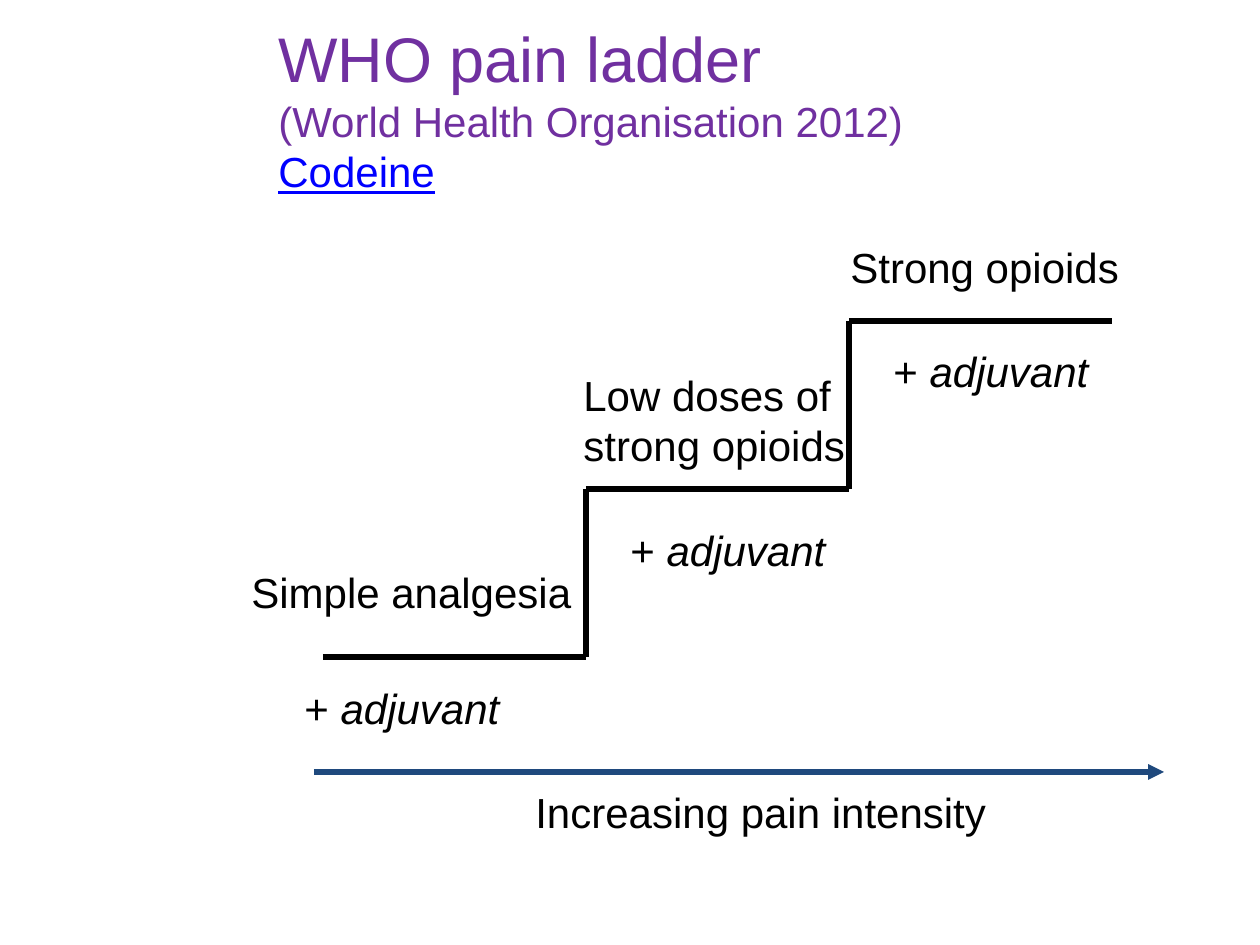
"""Build the pain ladder slide."""
import dataclasses
import typing

import lxml.etree
import pptx
import pptx.dml.color
import pptx.enum.shapes
import pptx.enum.text
import pptx.oxml.ns
import pptx.util

SCALE = 914400 / 126


@dataclasses.dataclass(frozen=True)
class Theme:
    font: str = "Arial"
    head: int = 36
    body: int = 24
    line: int = 3
    ink: str = "000000"
    title: str = "7030A0"
    link: str = "0000FF"
    arrow: str = "1F497D"


THEME = Theme()


class Run(typing.NamedTuple):
    text: str
    size: int = THEME.body
    color: str = THEME.ink
    slant: bool = False
    under: bool = False


class Box(typing.NamedTuple):
    left: int
    top: int
    width: int
    height: int


class Step(typing.NamedTuple):
    name: str
    label: Box
    wrap: bool
    extra: tuple[int, int]


STEPS = (
    Step("Simple analgesia", Box(239, 560, 345, 63), False, (292, 676)),
    Step("Low doses of strong opioids", Box(571, 363, 297, 115), True, (618, 518)),
    Step("Strong opioids", Box(838, 235, 294, 63), False, (881, 339)),
)
START, FLOOR, TREAD, RISE = 323, 657, 263, 168


def px(size: int) -> int:
    return round(size * SCALE)


def rgb(code: str) -> pptx.dml.color.RGBColor:
    return pptx.dml.color.RGBColor.from_string(code)


def add_text(slide, box: Box, *lines: tuple[Run, ...], wrap: bool = False, middle: bool = False) -> None:
    frame = slide.shapes.add_textbox(*map(px, box)).text_frame
    frame.word_wrap = wrap
    anchor = pptx.enum.text.MSO_ANCHOR
    frame.vertical_anchor = anchor.MIDDLE if middle else anchor.TOP
    para = frame.paragraphs[0]
    for index, line in enumerate(lines):
        if index:
            para.add_line_break()
        for part in line:
            run = para.add_run()
            run.text = part.text
            font = run.font
            font.name = THEME.font
            font.size = pptx.util.Pt(part.size)
            font.color.rgb = rgb(part.color)
            font.italic = part.slant
            font.underline = part.under


def add_line(slide, start: tuple[int, int], end: tuple[int, int], color: str = THEME.ink, arrow: bool = False) -> None:
    kind = pptx.enum.shapes.MSO_CONNECTOR.STRAIGHT
    link = slide.shapes.add_connector(kind, *map(px, start + end))
    link.line.color.rgb = rgb(color)
    link.line.width = pptx.util.Pt(THEME.line)
    name = pptx.oxml.ns.qn
    if arrow:
        lxml.etree.SubElement(link.line._get_or_add_ln(), name("a:tailEnd"), type="triangle")
    lxml.etree.SubElement(link._element.spPr, name("a:effectLst"))


def main() -> None:
    deck = pptx.Presentation()
    deck.slide_width, deck.slide_height = px(1260), px(945)
    slide = deck.slides.add_slide(deck.slide_layouts[6])
    add_text(
        slide,
        Box(266, 29, 669, 158),
        (Run("WHO pain ladder", THEME.head, THEME.title),),
        (Run("(World Health Organisation 2012)", color=THEME.title),),
        (Run("Codeine", color=THEME.link, under=True),),
        wrap=True,
        middle=True,
    )
    for index, step in enumerate(STEPS):
        left, top = START + index * TREAD, FLOOR - index * RISE
        if index:
            add_line(slide, (left, top), (left, top + RISE))
        add_line(slide, (left, top), (left + TREAD, top))
        add_text(slide, step.label, (Run(step.name),), wrap=step.wrap)
        add_text(slide, Box(*step.extra, 220, 63), (Run("+ "), Run("adjuvant", slant=True)))
    add_line(slide, (314, 772), (1164, 772), THEME.arrow, arrow=True)
    add_text(slide, Box(523, 780, 476, 63), (Run("Increasing pain intensity"),))
    deck.save("out.pptx")


if __name__ == "__main__":
    main()
